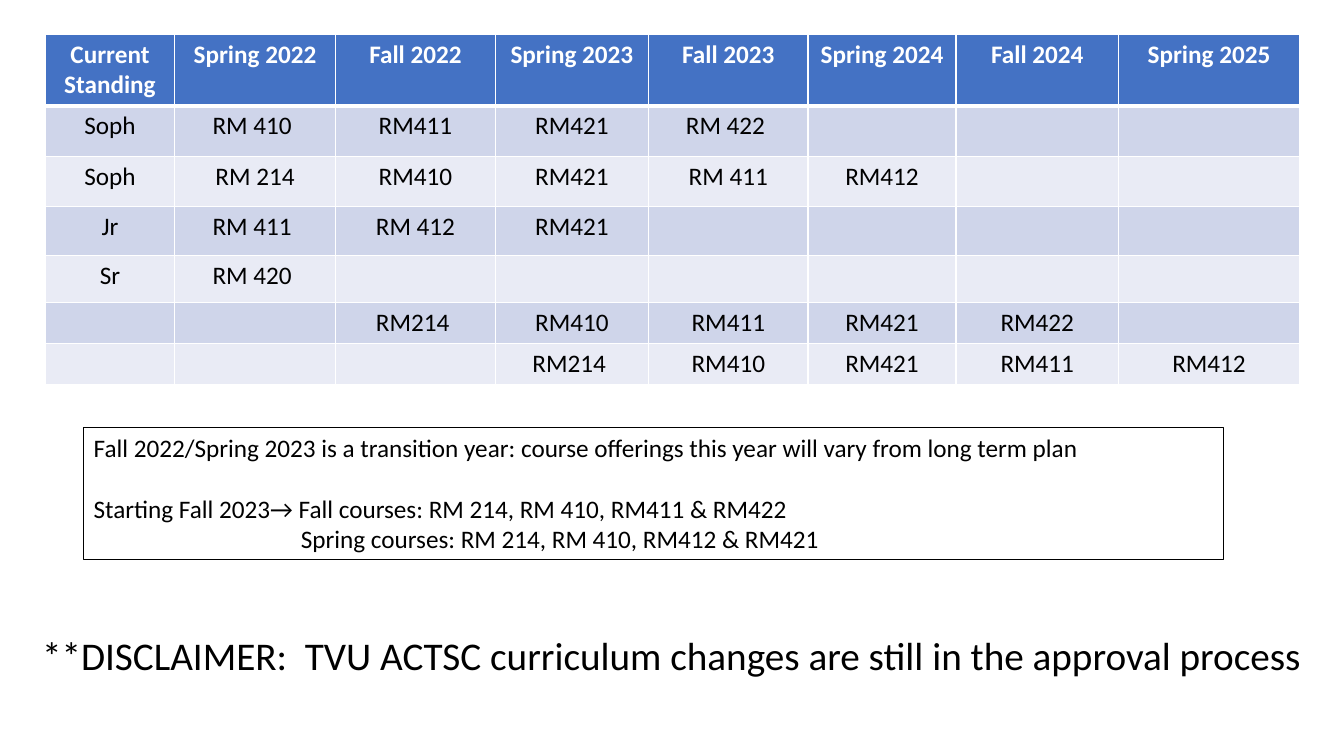
"""Build the course rotation slide with its schedule table and notes."""
from dataclasses import dataclass

import lxml.etree
import pptx
import pptx.dml.color
import pptx.enum.text
import pptx.oxml.ns
import pptx.presentation
import pptx.slide
import pptx.table
import pptx.text.text
import pptx.util

Pt = pptx.util.Pt
RGBColor = pptx.dml.color.RGBColor

FONT_NAME = "Calibri"
BLACK = RGBColor(0x00, 0x00, 0x00)
WHITE = RGBColor(0xFF, 0xFF, 0xFF)
HEADER_BLUE = RGBColor(0x44, 0x72, 0xC4)
BAND_COLORS = (RGBColor(0xCF, 0xD5, 0xEA), RGBColor(0xE9, 0xEB, 0xF5))

COLUMN_WIDTHS = (92, 115.2, 114, 109.6, 113.8, 105.8, 116, 129.4)
ROW_HEIGHTS = (50.6, 36, 36, 35.2, 33.6, 29.2, 29.2)
SCHEDULE = (
    ("Current Standing", "Spring 2022", "Fall 2022", "Spring 2023",
     "Fall 2023", "Spring 2024", "Fall 2024", "Spring 2025"),
    ("Soph", "RM 410 ", "RM411", "RM421", "RM 422 ", "", "", ""),
    ("Soph", "RM 214", "RM410", "RM421", "RM 411", "RM412", "", ""),
    ("Jr", "RM 411 ", "RM 412", "RM421", "", "", "", ""),
    ("Sr", "RM 420 ", "", "", "", "", "", ""),
    ("", "", "RM214 ", "RM410", "RM411", "RM421", "RM422", ""),
    ("", "", "", "RM214 ", "RM410", "RM421", "RM411", "RM412"),
)


@dataclass(frozen=True)
class Line:
    text: str
    space_before: float = 0
    indent: float = 0


@dataclass(frozen=True)
class Note:
    left: float
    top: float
    width: float
    height: float
    font_size: float
    lines: tuple[Line, ...]
    bordered: bool = False


NOTES = (
    Note(59.8, 305.3, 814.3, 94.3, 18, (
        Line("Fall 2022/Spring 2023 is a transition year: course offerings "
             "this year will vary from long term plan"),
        Line("Starting Fall 2023→ Fall courses: RM 214, RM 410, RM411 & RM422",
             space_before=22),
        Line("Spring courses: RM 214, RM 410, RM412 & RM421", indent=148),
    ), bordered=True),
    Note(23, 447.1, 914.4, 41.2, 28, (
        Line("**DISCLAIMER:  TVU ACTSC curriculum changes are still "
             "in the approval process"),
    )),
)


def format_paragraph(paragraph: pptx.text.text._Paragraph, size: float,
                     color: RGBColor, bold: bool = False) -> None:
    paragraph.font.name = FONT_NAME
    paragraph.font.size = Pt(size)
    paragraph.font.bold = bold
    paragraph.font.color.rgb = color


def add_cell_borders(cell: pptx.table._Cell, widths: dict[str, float]) -> None:
    properties = cell._tc.get_or_add_tcPr()
    qualified_name = pptx.oxml.ns.qn
    for position, (side, width) in enumerate(widths.items()):
        border = lxml.etree.Element(qualified_name(f"a:ln{side}"), w=str(Pt(width)))
        fill = lxml.etree.SubElement(border, qualified_name("a:solidFill"))
        lxml.etree.SubElement(fill, qualified_name("a:srgbClr"), val=str(WHITE))
        properties.insert(position, border)


def add_schedule(slide: pptx.slide.Slide) -> None:
    frame = slide.shapes.add_table(
        len(ROW_HEIGHTS), len(COLUMN_WIDTHS), Pt(32.6), Pt(24.4),
        Pt(sum(COLUMN_WIDTHS)), Pt(sum(ROW_HEIGHTS)))
    table = frame.table
    for column, width in zip(table.columns, COLUMN_WIDTHS):
        column.width = Pt(width)
    for row_index, (row, height, texts) in enumerate(
            zip(table.rows, ROW_HEIGHTS, SCHEDULE)):
        row.height = Pt(height)
        is_header = row_index == 0
        fill_color = HEADER_BLUE if is_header else BAND_COLORS[(row_index - 1) % 2]
        borders = {"L": 1, "R": 1, "T": 3 if row_index == 1 else 1,
                   "B": 3 if is_header else 1}
        for cell, text in zip(row.cells, texts):
            cell.text = text
            cell.fill.solid()
            cell.fill.fore_color.rgb = fill_color
            add_cell_borders(cell, borders)
            paragraph = cell.text_frame.paragraphs[0]
            paragraph.alignment = pptx.enum.text.PP_ALIGN.CENTER
            format_paragraph(paragraph, 18, WHITE if is_header else BLACK, is_header)


def add_note(slide: pptx.slide.Slide, note: Note) -> None:
    shape = slide.shapes.add_textbox(
        Pt(note.left), Pt(note.top), Pt(note.width), Pt(note.height))
    if note.bordered:
        shape.line.color.rgb = BLACK
        shape.line.width = Pt(0.75)
    text_frame = shape.text_frame
    text_frame.word_wrap = True
    text_frame.auto_size = pptx.enum.text.MSO_AUTO_SIZE.SHAPE_TO_FIT_TEXT
    text_frame.text = "\n".join(line.text for line in note.lines)
    for paragraph, line in zip(text_frame.paragraphs, note.lines):
        format_paragraph(paragraph, note.font_size, BLACK)
        paragraph.space_before = Pt(line.space_before)
        paragraph._p.get_or_add_pPr().set("marL", str(Pt(line.indent)))


def main() -> None:
    presentation = pptx.Presentation()
    presentation.slide_width = Pt(960)
    presentation.slide_height = Pt(540)
    slide = presentation.slides.add_slide(
        presentation.slide_layouts.get_by_name("Blank"))
    add_schedule(slide)
    for note in NOTES:
        add_note(slide, note)
    presentation.save("out.pptx")


if __name__ == "__main__":
    main()
